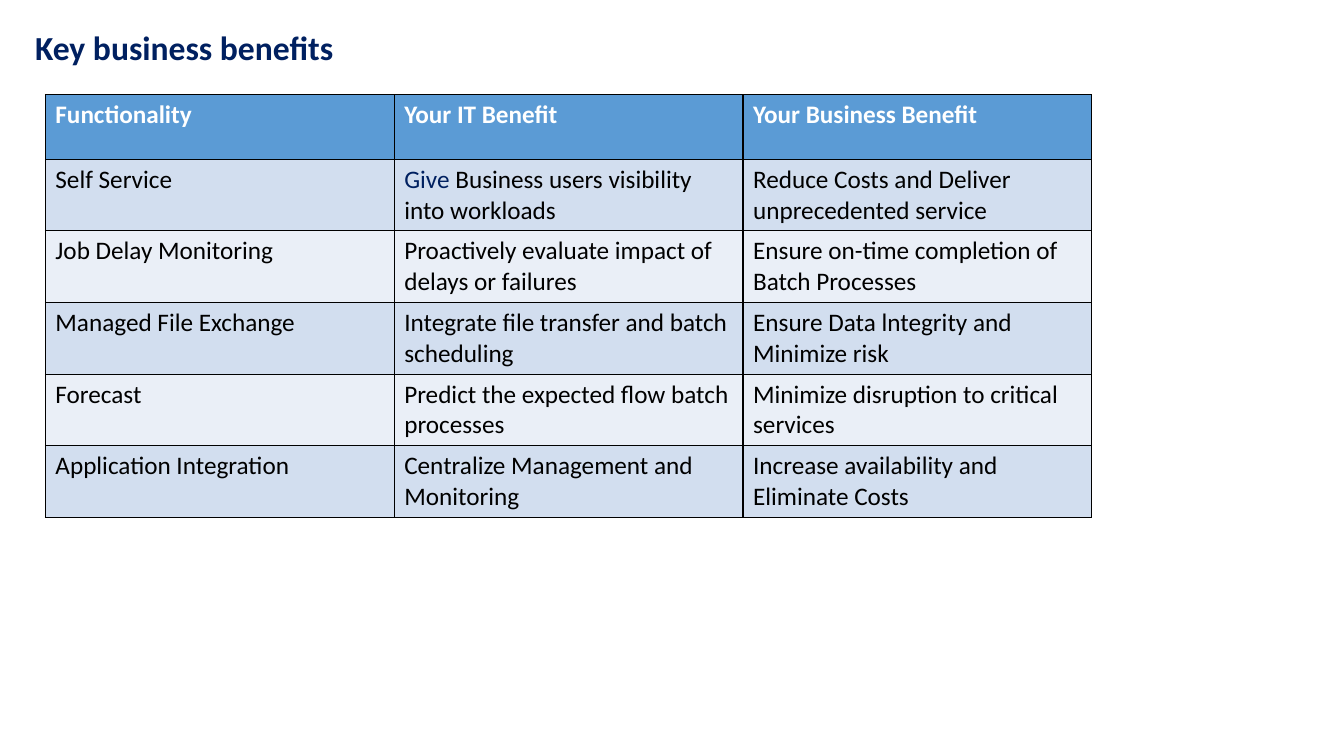
from lxml import etree
from pptx import Presentation
from pptx.dml.color import RGBColor
from pptx.oxml.ns import qn
from pptx.util import Inches, Pt

FONT = "Calibri"
NAVY, BLACK, WHITE = "002060", "000000", "FFFFFF"
HEAD, BANDS = "5B9BD5", ("D2DEEF", "EAEFF7")
ACCENT = "Give "

ROWS = [
    ("Functionality", "Your IT Benefit", "Your Business Benefit"),
    ("Self Service", "Give Business users visibility into workloads",
     "Reduce Costs and Deliver unprecedented service"),
    ("Job Delay Monitoring", "Proactively evaluate impact of delays or failures",
     "Ensure on-time completion of Batch Processes"),
    ("Managed File Exchange", "Integrate file transfer and batch scheduling",
     "Ensure Data lntegrity and Minimize risk"),
    ("Forecast", "Predict the expected flow batch processes",
     "Minimize disruption to critical services"),
    ("Application Integration", "Centralize Management and Monitoring",
     "Increase availability and Eliminate Costs"),
]


def color(code):
    return RGBColor.from_string(code)


def style(run, size, code, bold=False):
    run.font.name = FONT
    run.font.size = Pt(size)
    run.font.bold = bold
    run.font.color.rgb = color(code)


def border(cell):
    props = cell._tc.get_or_add_tcPr()
    # Border lines come before the fill in the cell properties
    for spot, side in enumerate(("a:lnL", "a:lnR", "a:lnT", "a:lnB")):
        line = etree.Element(qn(side), w=str(Pt(1)))
        fill = etree.SubElement(line, qn("a:solidFill"))
        etree.SubElement(fill, qn("a:srgbClr"), val=BLACK)
        props.insert(spot, line)


def add_title(slide, left, top, width, height):
    box = slide.shapes.add_textbox(
        Inches(left), Inches(top), Inches(width), Inches(height))
    frame = box.text_frame
    frame.word_wrap = True
    frame.text = "Key business benefits"
    style(frame.paragraphs[0].runs[0], 24, NAVY, True)


def fill_cell(cell, text, row):
    head = row == 0
    cell.fill.solid()
    cell.fill.fore_color.rgb = color(HEAD if head else BANDS[(row - 1) % 2])
    border(cell)
    para = cell.text_frame.paragraphs[0]
    # The opening word of one benefit is navy
    if text.startswith(ACCENT):
        para.text = ACCENT
        style(para.runs[0], 18, NAVY)
        rest = para.add_run()
        rest.text = text.removeprefix(ACCENT)
    else:
        para.text = text
        rest = para.runs[0]
    style(rest, 18, WHITE if head else BLACK, head)


def add_benefits(slide, left, top, width, height):
    count = len(ROWS[0])
    table = slide.shapes.add_table(
        len(ROWS), count, Inches(left), Inches(top),
        Inches(width), Inches(height)).table
    for col in table.columns:
        col.width = Inches(width / count)
    for row, texts in enumerate(ROWS):
        table.rows[row].height = Inches(height / len(ROWS))
        for col, text in enumerate(texts):
            fill_cell(table.cell(row, col), text, row)


def main():
    deck = Presentation()
    deck.slide_width, deck.slide_height = Inches(13.33), Inches(7.5)
    slide = deck.slides.add_slide(deck.slide_layouts[6])
    add_benefits(slide, 0.45, 0.94, 10.38, 3.84)
    add_title(slide, 0.25, 0.22, 3.96, 0.5)
    deck.save("out.pptx")


if __name__ == "__main__":
    main()
